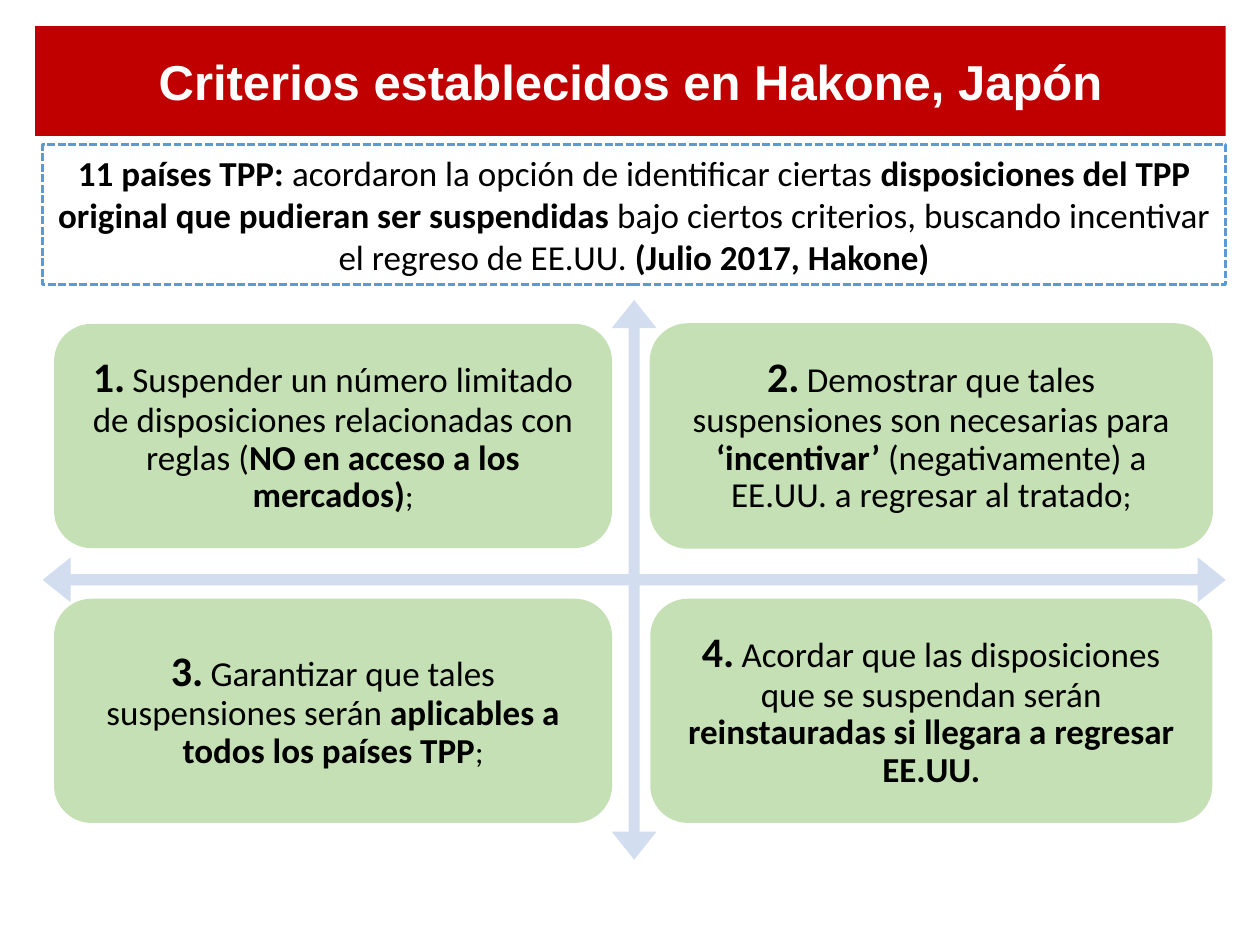
from pptx import Presentation
from pptx.dml.color import RGBColor
from pptx.enum.dml import MSO_LINE
from pptx.enum.shapes import MSO_SHAPE
from pptx.enum.text import MSO_ANCHOR, PP_ALIGN
from pptx.util import Cm, Pt

RECT, ROUND, QUAD = MSO_SHAPE.RECTANGLE, MSO_SHAPE.ROUNDED_RECTANGLE, MSO_SHAPE.QUAD_ARROW
MIDDLE, TOP, CENTER = MSO_ANCHOR.MIDDLE, MSO_ANCHOR.TOP, PP_ALIGN.CENTER
DASH = MSO_LINE.SQUARE_DOT
RED, WHITE, BLACK = "C00000", "FFFFFF", "000000"
BLUE, PALE_BLUE, GREEN = "5B9BD5", "D2DEEF", "C5E0B4"


def add_box(kind, x, y, w, h, fill):
    sp = s.shapes.add_shape(kind, Cm(x), Cm(y), Cm(w), Cm(h))
    sp.shadow.inherit = False
    sp.fill.solid()
    sp.fill.fore_color.rgb = RGBColor.from_string(fill)
    sp.line.fill.background()
    return sp


def add_text(sp, runs, font="Calibri", color=BLACK, anchor=MIDDLE, inset=None, spacing=None):
    """Write runs of (text, size, bold) as one centred paragraph."""
    tf = sp.text_frame
    tf.word_wrap = True
    tf.vertical_anchor = anchor
    if inset is not None:
        tf.margin_left = tf.margin_right = tf.margin_top = tf.margin_bottom = Cm(inset)
    p = tf.paragraphs[0]
    p.alignment = CENTER
    if spacing:
        p.line_spacing = spacing
    for text, size, bold in runs:
        r = p.add_run()
        r.text = text
        r.font.name, r.font.size, r.font.bold = font, Pt(size), bold
        r.font.color.rgb = RGBColor.from_string(color)


prs = Presentation()
prs.slide_width, prs.slide_height = Cm(25.4), Cm(19.05)
s = prs.slides.add_slide(prs.slide_layouts[6])

# Title band
title = add_box(RECT, 0.71, 0.53, 24, 2.21, RED)
add_text(title, [("Criterios establecidos en Hakone, Japón", 28, True)], font="Arial", color=WHITE)

# Summary with dashed border
summary = add_box(RECT, 0.86, 2.92, 23.85, 2.82, WHITE)
summary.line.color.rgb = RGBColor.from_string(BLUE)
summary.line.width = Pt(1.5)
summary.line.dash_style = DASH
add_text(summary, [
    ("11 países TPP: ", 20, True),
    ("acordaron la opción de identificar ciertas ", 20, False),
    ("disposiciones del TPP original que pudieran ser suspendidas", 20, True),
    (" bajo ciertos criterios, buscando incentivar el regreso de EE.UU.", 20, False),
    (" (Julio 2017, Hakone)", 20, True),
], anchor=TOP)

# Four-way arrow behind the cards
arrow = add_box(QUAD, 0.86, 6.05, 23.85, 11.28, PALE_BLUE)
for i, value in enumerate((0.02, 0.04, 0.05)):
    arrow.adjustments[i] = value

# Criteria cards, two by two
criteria = [
    [("Suspender un número limitado de disposiciones relacionadas con reglas (", 20, False),
     ("NO en acceso a los mercados)", 20, True),
     (";", 18, False)],
    [("Demostrar que tales suspensiones son necesarias para ", 20, False),
     ("‘incentivar’", 20, True),
     (" (negativamente) a EE.UU. a regresar al tratado", 20, False),
     (";", 18, False)],
    [("Garantizar que tales suspensiones serán ", 20, False),
     ("aplicables a todos los países TPP", 20, True),
     (";", 18, False)],
    [("Acordar que las disposiciones que se suspendan serán ", 20, False),
     ("reinstauradas si llegara a regresar EE.UU.", 20, True)],
]
columns = [(1.09, 11.25), (13.11, 11.33)]
for i, runs in enumerate(criteria):
    row, col = divmod(i, 2)
    x, w = columns[col]
    card = add_box(ROUND, x, 6.53 + row * 5.54, w, 4.52, GREEN)
    if i == 1:
        card.line.color.rgb = RGBColor.from_string(GREEN)
        card.line.width = Pt(0.75)
    add_text(card, [(f"{i + 1}.", 24, True), (" ", 18, False)] + runs, inset=0.25, spacing=0.9)

prs.save("out.pptx")
